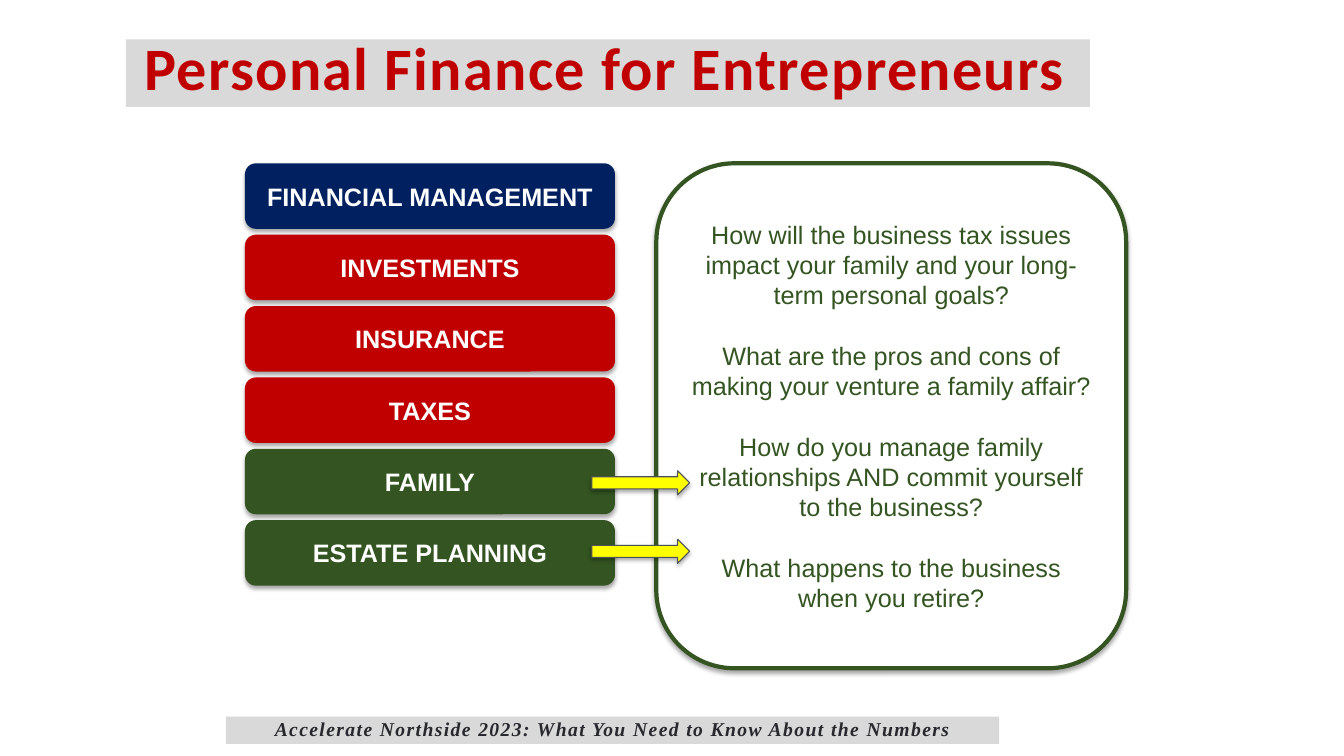
from lxml import etree
from pptx import Presentation
from pptx.dml.color import RGBColor
from pptx.enum.shapes import MSO_SHAPE
from pptx.enum.text import MSO_ANCHOR, PP_ALIGN
from pptx.oxml.ns import qn
from pptx.util import Inches, Pt

# Content
TITLE = "Personal Finance for Entrepreneurs"
FOOTER = "Accelerate Northside 2023: What You Need to Know About the Numbers"
NAVY, RED, GREEN = "002060", "C00000", "345522"
WHITE, GREY, YELLOW = "FFFFFF", "D9D9D9", "FFFF00"
TOPICS = [
    ("FINANCIAL MANAGEMENT", NAVY),
    ("INVESTMENTS", RED),
    ("INSURANCE", RED),
    ("TAXES", RED),
    ("FAMILY", GREEN),
    ("ESTATE PLANNING", GREEN),
]
QUESTIONS = [
    "How will the business tax issues impact your family and your long-term personal goals?",
    "What are the pros and cons of making your venture a family affair?",
    "How do you manage family relationships AND commit yourself to the business?",
    "What happens to the business when you retire?",
]
ARROW_TOPS = [5.35, 4.67]

# Layout in inches
TOPIC_LEFT, TOPIC_TOP, TOPIC_W, TOPIC_H = 2.43, 1.62, 3.67, 0.65
TOPIC_STEP = 0.708


def rgb(value):
    return RGBColor.from_string(value)


def add_shadow(sp):
    effects = sp._element.spPr.find(qn("a:effectLst"))
    shadow = etree.SubElement(effects, qn("a:outerShdw"), blurRad="40000",
                              dist="23000", dir="5400000", rotWithShape="0")
    color = etree.SubElement(shadow, qn("a:srgbClr"), val="000000")
    etree.SubElement(color, qn("a:alpha"), val="35000")


def add_box(kind, box, fill, line=None, width=0, shadow=True):
    sp = s.shapes.add_shape(kind, *map(Inches, box))
    sp.shadow.inherit = False
    sp.fill.solid()
    sp.fill.fore_color.rgb = rgb(fill)
    if line:
        sp.line.color.rgb = rgb(line)
        sp.line.width = Pt(width)
    else:
        sp.line.fill.background()
    if shadow:
        add_shadow(sp)
    return sp


def add_text(sp, lines, size, color, font="Arial", bold=False, italic=False,
             align=PP_ALIGN.CENTER, gap=0, spacing=None, tracking=0):
    tf = sp.text_frame
    tf.word_wrap = True
    tf.vertical_anchor = MSO_ANCHOR.MIDDLE
    for i, line in enumerate(lines):
        p = tf.add_paragraph() if i else tf.paragraphs[0]
        p.alignment = align
        if spacing:
            p.line_spacing = spacing
        if i:
            p.space_before = Pt(gap)
        r = p.add_run()
        r.text = line
        r.font.name, r.font.size = font, Pt(size)
        r.font.bold, r.font.italic = bold, italic
        r.font.color.rgb = rgb(color)
        if tracking:
            r._r.get_or_add_rPr().set("spc", str(tracking * 100))


def add_band(box, text, size, color, font, left=0, **style):
    sp = add_box(MSO_SHAPE.RECTANGLE, box, GREY, shadow=False)
    add_text(sp, [text], size, color, font, bold=True, spacing=0.8, tracking=1, **style)
    tf = sp.text_frame
    tf.vertical_anchor = MSO_ANCHOR.TOP
    tf.margin_left, tf.margin_top = Inches(left), Inches(0.05)
    tf.margin_right = tf.margin_bottom = 0


prs = Presentation()
prs.slide_width, prs.slide_height = Inches(13.33), Inches(7.5)
s = prs.slides.add_slide(prs.slide_layouts[6])

# Topic stack
for i, (topic, fill) in enumerate(TOPICS):
    top = TOPIC_TOP + i * TOPIC_STEP
    sp = add_box(MSO_SHAPE.ROUNDED_RECTANGLE, (TOPIC_LEFT, top, TOPIC_W, TOPIC_H), fill)
    add_text(sp, [topic], 18, WHITE, bold=True)

# Question panel
panel = add_box(MSO_SHAPE.ROUNDED_RECTANGLE, (6.51, 1.62, 4.66, 5.01), WHITE, GREEN, 3)
add_text(panel, QUESTIONS, 18, GREEN, gap=21.6)

# Arrows from topics to questions
for top in ARROW_TOPS:
    add_box(MSO_SHAPE.RIGHT_ARROW, (5.87, top, 0.97, 0.24), YELLOW, "4C515A", 0.75)

# Footer and title bands
add_band((2.24, 7.11, 7.67, 0.27), FOOTER, 14, "26282D", "Times New Roman", italic=True)
add_band((1.25, 0.39, 9.56, 0.67), TITLE, 43, RED, "Calibri", left=0.18, align=PP_ALIGN.LEFT)

prs.save("out.pptx")
